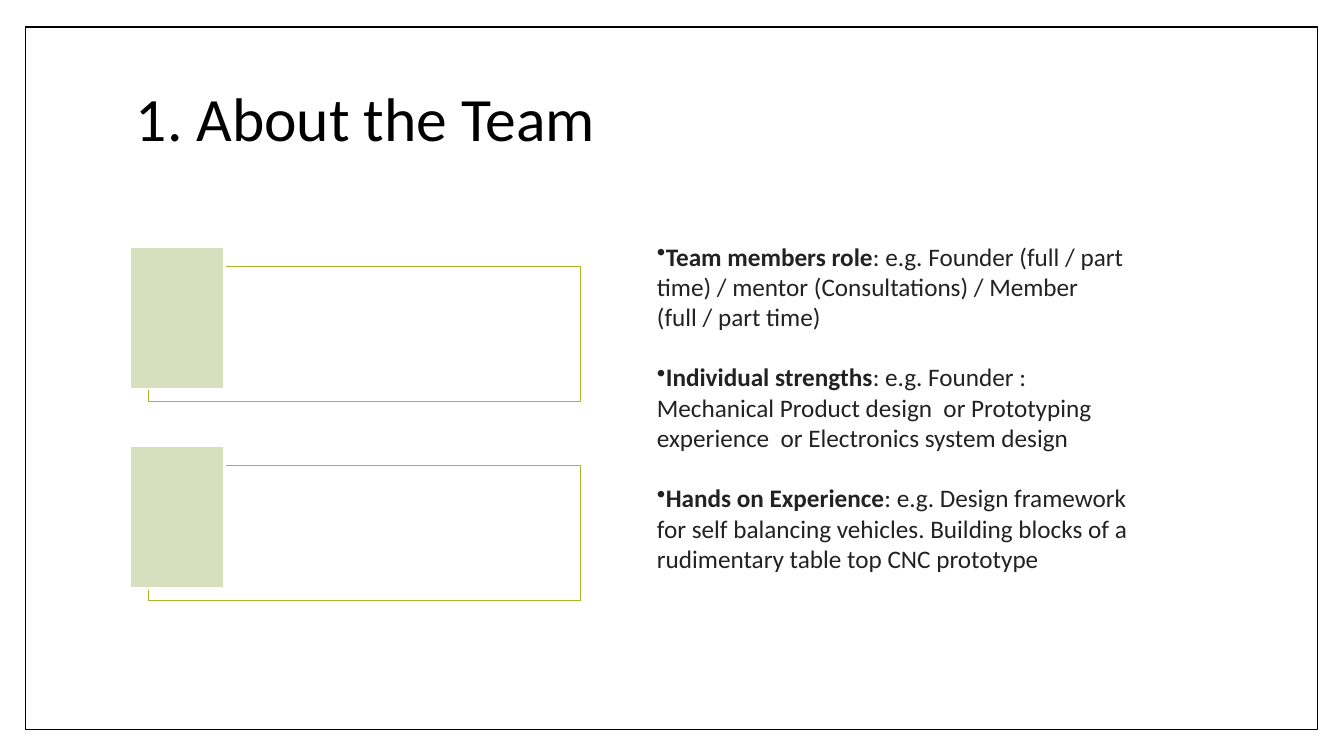
from dataclasses import dataclass

import pptx
import pptx.dml.color
import pptx.enum.shapes
import pptx.enum.text
import pptx.oxml.ns
import pptx.oxml.xmlchemy
import pptx.util
from pptx.shapes.autoshape import Shape
from pptx.slide import Slide
from pptx.text.text import _Paragraph as Paragraph

Pt = pptx.util.Pt
FONT = "Calibri"
BLACK, WHITE, INK = "000000", "FFFFFF", "222222"
OLIVE, PALE_OLIVE = "A6B727", "D8DFBE"


@dataclass(frozen=True)
class Box:
    left: float
    top: float
    width: float
    height: float

    def lengths(self) -> tuple:
        return Pt(self.left), Pt(self.top), Pt(self.width), Pt(self.height)


@dataclass(frozen=True)
class TeamPoint:
    label: str
    example: str


FRAME = Box(18, 19.4, 923, 501.8)
TITLE = Box(90, 30.2, 777.6, 113.8)
POINTS = Box(462.2, 168.5, 357.1, 269.3)
CARD_TOPS = (190.4, 332.6)

TEAM_POINTS = (
    TeamPoint("Team members role",
              ": e.g. Founder (full / part time) / mentor (Consultations) / Member (full / part time)"),
    TeamPoint("Individual strengths",
              ": e.g. Founder : Mechanical Product design  or Prototyping experience  or Electronics system design"),
    TeamPoint("Hands on Experience",
              ": e.g. Design framework for self balancing vehicles. "
              "Building blocks of a rudimentary table top CNC prototype"),
)


def color(value: str) -> pptx.dml.color.RGBColor:
    return pptx.dml.color.RGBColor.from_string(value)


def add_rectangle(slide: Slide, box: Box, fill: str, line: str,
                  line_width: float, opacity: int = 100) -> Shape:
    shape = slide.shapes.add_shape(pptx.enum.shapes.MSO_SHAPE.RECTANGLE, *box.lengths())
    shape.shadow.inherit = False
    shape.fill.solid()
    shape.fill.fore_color.rgb = color(fill)
    shape.line.color.rgb = color(line)
    shape.line.width = Pt(line_width)
    if opacity < 100:
        fill_color = shape._element.spPr.find(
            "/".join(pptx.oxml.ns.qn(tag) for tag in ("a:solidFill", "a:srgbClr")))
        alpha = pptx.oxml.xmlchemy.OxmlElement("a:alpha")
        alpha.set("val", str(opacity * 1000))
        fill_color.append(alpha)
    return shape


def add_text_box(slide: Slide, box: Box) -> Shape:
    shape = slide.shapes.add_textbox(*box.lengths())
    shape.text_frame.word_wrap = True
    return shape


def add_text(paragraph: Paragraph, text: str, *, size: float,
             text_color: str, bold: bool = False) -> None:
    run = paragraph.add_run()
    run.text = text
    run.font.name = FONT
    run.font.size = Pt(size)
    run.font.bold = bold
    run.font.color.rgb = color(text_color)


def add_bullet(paragraph: Paragraph) -> None:
    bullet = pptx.oxml.xmlchemy.OxmlElement("a:buChar")
    bullet.set("char", "•")
    paragraph._p.get_or_add_pPr().append(bullet)


def add_team_card(slide: Slide, top: float) -> None:
    add_rectangle(slide, Box(105.8, top, 308.9, 96.5), WHITE, OLIVE, 0.75, opacity=40)
    add_rectangle(slide, Box(92.9, top - 14, 67.7, 101.5), PALE_OLIVE, WHITE, 2)


def add_title(slide: Slide) -> None:
    text_frame = add_text_box(slide, TITLE).text_frame
    text_frame.vertical_anchor = pptx.enum.text.MSO_ANCHOR.MIDDLE
    paragraph = text_frame.paragraphs[0]
    paragraph.line_spacing = 0.9
    add_text(paragraph, "1. About the Team", size=44, text_color=BLACK)


def add_team_points(slide: Slide) -> None:
    text_frame = add_text_box(slide, POINTS).text_frame
    for index, point in enumerate(TEAM_POINTS):
        paragraph = text_frame.add_paragraph() if index else text_frame.paragraphs[0]
        paragraph.space_before = Pt(21.6 if index else 0)
        add_bullet(paragraph)
        add_text(paragraph, point.label, size=18, text_color=INK, bold=True)
        add_text(paragraph, point.example, size=18, text_color=INK)


def main() -> None:
    presentation = pptx.Presentation()
    presentation.slide_width, presentation.slide_height = Pt(960), Pt(540)
    slide = presentation.slides.add_slide(presentation.slide_layouts[6])

    # Frame and heading
    add_rectangle(slide, FRAME, WHITE, BLACK, 1)
    add_title(slide)

    # Empty team cards on the left
    for top in CARD_TOPS:
        add_team_card(slide, top)

    # What to describe, on the right
    add_team_points(slide)

    presentation.save("out.pptx")


if __name__ == "__main__":
    main()
